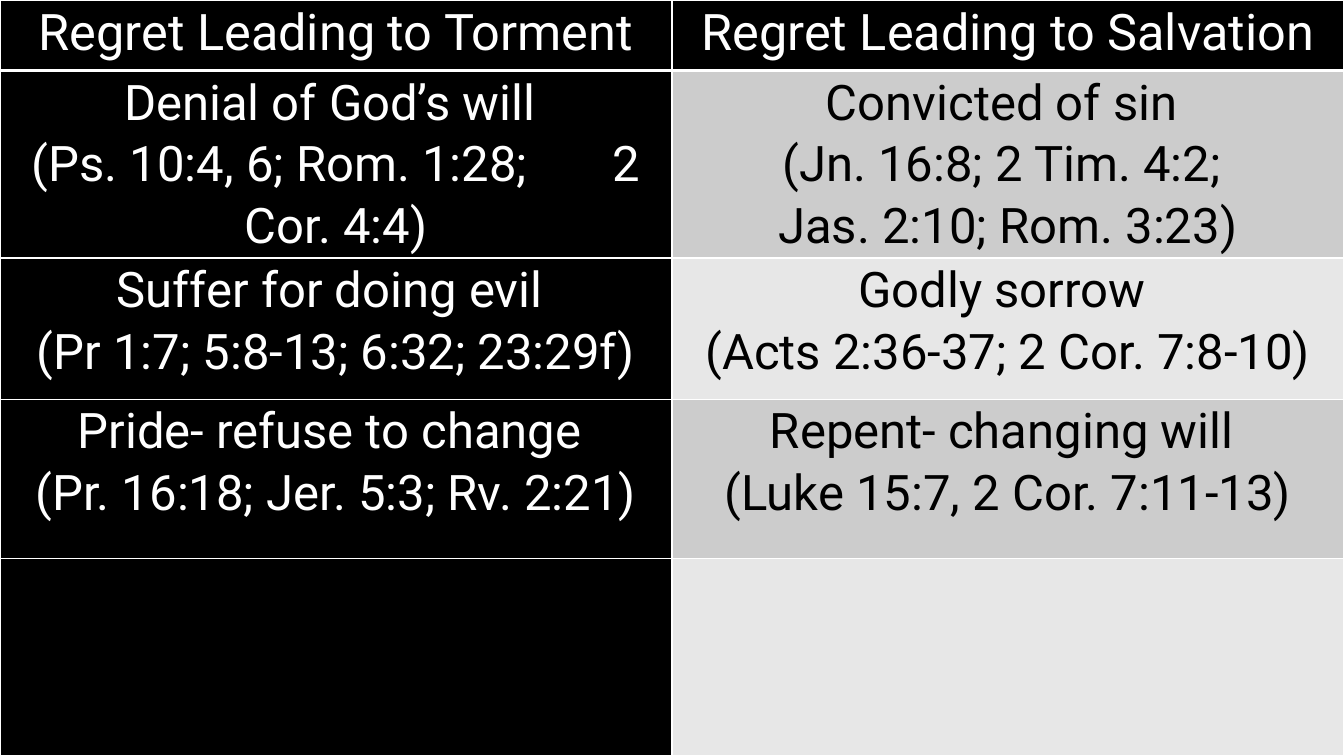
from dataclasses import dataclass

from lxml.etree import SubElement
from pptx import Presentation
from pptx.dml.color import RGBColor
from pptx.enum.text import PP_ALIGN
from pptx.oxml.ns import qn
from pptx.util import Inches, Pt


@dataclass(frozen=True)
class Theme:
    font: str = "Roboto"
    dark: str = "000000"
    light: str = "FFFFFF"
    bands: tuple = ("CCCCCC", "E7E7E7")
    header_size: int = 36
    body_size: int = 35
    line_spacing: float = 1.07
    rule: int = 1
    header_rule: int = 3


SLIDE_WIDTH, SLIDE_HEIGHT = 13.33, 7.5
ROW_HEIGHTS = (0.7, 1.86, 1.4, 1.58, 1.96)
REFERENCE_TAB = 5.76

# Each row holds the torment lines and the salvation lines.
REGRETS = (
    (("Regret Leading to Torment",), ("Regret Leading to Salvation",)),
    (("Denial of God’s will ", "(Ps. 10:4, 6; Rom. 1:28;\t2 Cor. 4:4)"),
     ("Convicted of sin ", "(Jn. 16:8; 2 Tim. 4:2; ", "Jas. 2:10; Rom. 3:23)")),
    (("Suffer for doing evil ", "(Pr 1:7; 5:8-13; 6:32; 23:29f)"),
     ("Godly sorrow ", "(Acts 2:36-37; 2 Cor. 7:8-10)")),
    (("Pride- refuse to change ", "(Pr. 16:18; Jer. 5:3; Rv. 2:21)"),
     ("Repent- changing will ", "(Luke 15:7, 2 Cor. 7:11-13)")),
    ((), ()),
)


def apply(target, formats):
    for name, value in formats.items():
        setattr(target, name, value)


class SlideBuilder:
    def __init__(self, slide, theme):
        self.slide = slide
        self.theme = theme

    def background(self):
        fill = self.slide.background.fill
        fill.solid()
        fill.fore_color.rgb = RGBColor.from_string(self.theme.dark)

    def borders(self, cell, row):
        """Rule all four sides, heavier between the header and the body."""
        theme = self.theme
        properties = cell._tc.get_or_add_tcPr()
        for side in "LRTB":
            below_header = (row, side) in ((0, "B"), (1, "T"))
            width = theme.header_rule if below_header else theme.rule
            line = SubElement(properties, qn(f"a:ln{side}"), w=str(Pt(width)))
            solid = SubElement(line, qn("a:solidFill"))
            SubElement(solid, qn("a:srgbClr"), val=theme.light)

    def paragraph(self, paragraph, text, size, color):
        apply(paragraph, {"alignment": PP_ALIGN.CENTER,
                          "line_spacing": self.theme.line_spacing})
        if "\t" in text:
            tabs = SubElement(paragraph._p.get_or_add_pPr(), qn("a:tabLst"))
            SubElement(tabs, qn("a:tab"), pos=str(Inches(REFERENCE_TAB)), algn="l")
        run = paragraph.add_run()
        run.text = text
        apply(run.font, {"name": self.theme.font, "size": Pt(size), "bold": False})
        run.font.color.rgb = RGBColor.from_string(color)

    def cell(self, cell, lines, row, column):
        theme = self.theme
        is_dark = row == 0 or column == 0
        apply(cell, {"margin_left": Inches(0.07), "margin_right": Inches(0.07),
                     "margin_top": 0, "margin_bottom": 0})
        self.borders(cell, row)
        cell.fill.solid()
        band = theme.bands[(row - 1) % len(theme.bands)]
        cell.fill.fore_color.rgb = RGBColor.from_string(theme.dark if is_dark else band)
        size = theme.body_size if row else theme.header_size
        frame = cell.text_frame
        for index, text in enumerate(lines):
            paragraph = frame.add_paragraph() if index else frame.paragraphs[0]
            self.paragraph(paragraph, text, size, theme.light if is_dark else theme.dark)

    def table(self, rows, heights):
        columns = len(rows[0])
        table = self.slide.shapes.add_table(
            len(rows), columns, 0, 0, Inches(SLIDE_WIDTH), Inches(sum(heights))).table
        apply(table, {"first_row": False, "horz_banding": False})
        for column in table.columns:
            column.width = Inches(SLIDE_WIDTH / columns)
        for row, (contents, height) in enumerate(zip(rows, heights)):
            table.rows[row].height = Inches(height)
            for column, lines in enumerate(contents):
                self.cell(table.cell(row, column), lines, row, column)


def main():
    deck = Presentation()
    apply(deck, {"slide_width": Inches(SLIDE_WIDTH), "slide_height": Inches(SLIDE_HEIGHT)})
    builder = SlideBuilder(deck.slides.add_slide(deck.slide_layouts[6]), Theme())
    builder.background()
    builder.table(REGRETS, ROW_HEIGHTS)
    deck.save("out.pptx")


if __name__ == "__main__":
    main()
